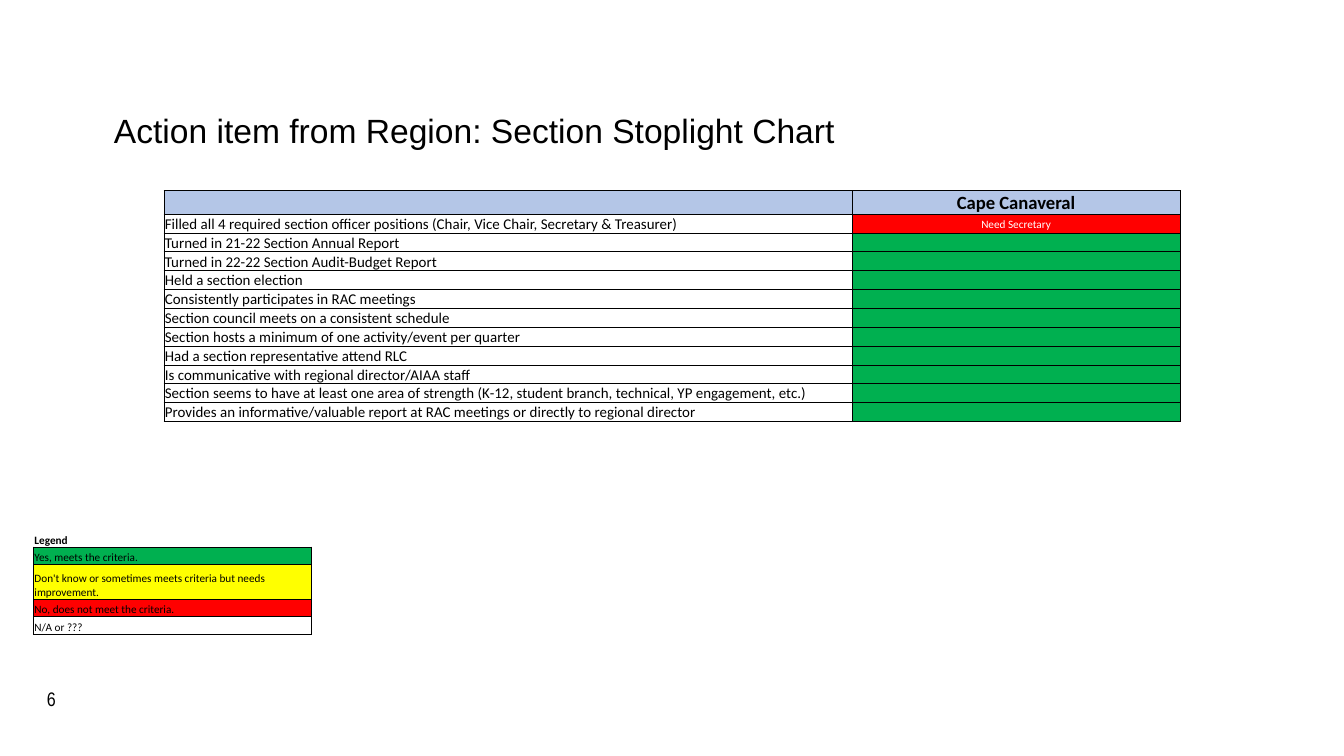
import pptx
import pptx.util
import pptx.dml.color
import pptx.enum.text
import pptx.oxml.ns
import lxml.etree

Inches, Pt = pptx.util.Inches, pptx.util.Pt
RGBColor = pptx.dml.color.RGBColor
ALIGN, ANCHOR = pptx.enum.text.PP_ALIGN, pptx.enum.text.MSO_ANCHOR
qn = pptx.oxml.ns.qn

BLACK = RGBColor(0x00, 0x00, 0x00)
WHITE = RGBColor(0xFF, 0xFF, 0xFF)
BLUE = RGBColor(0xB4, 0xC6, 0xE7)
GREEN = RGBColor(0x00, 0xB0, 0x50)
YELLOW = RGBColor(0xFF, 0xFF, 0x00)
RED = RGBColor(0xFF, 0x00, 0x00)

TITLE = "Action item from Region: Section Stoplight Chart"
PAGE = "6"
SECTION = "Cape Canaveral"
CRITERIA = [
    ("Filled all 4 required section officer positions (Chair, Vice Chair, Secretary & Treasurer)", "Need Secretary", RED),
    ("Turned in 21-22 Section Annual Report", "", GREEN),
    ("Turned in 22-22 Section Audit-Budget Report", "", GREEN),
    ("Held a section election", "", GREEN),
    ("Consistently participates in RAC meetings", "", GREEN),
    ("Section council meets on a consistent schedule", "", GREEN),
    ("Section hosts a minimum of one activity/event per quarter", "", GREEN),
    ("Had a section representative attend RLC", "", GREEN),
    ("Is communicative with regional director/AIAA staff", "", GREEN),
    ("Section seems to have at least one area of strength (K-12, student branch, technical, YP engagement, etc.)", "", GREEN),
    ("Provides an informative/valuable report at RAC meetings or directly to regional director", "", GREEN),
]
LEGEND = [
    ("Yes, meets the criteria.", GREEN, 0.13),
    ("Don't know or sometimes meets criteria but needs improvement.", YELLOW, 0.26),
    ("No, does not meet the criteria.", RED, 0.13),
    ("N/A or ???", None, 0.13),
]


def add_run(p, text, size, font, color=BLACK, bold=False):
    r = p.add_run()
    r.text = text
    r.font.size, r.font.name, r.font.bold = Pt(size), font, bold
    r.font.color.rgb = color


def add_text(s, box, text, size, font, anchor):
    tf = s.shapes.add_textbox(*map(Inches, box)).text_frame
    tf.word_wrap = True
    tf.vertical_anchor = anchor
    add_run(tf.paragraphs[0], text, size, font)


def add_grid(s, left, top, cols, rows):
    frame = s.shapes.add_table(len(rows), len(cols), Inches(left), Inches(top),
                               Inches(sum(cols)), Inches(sum(rows)))
    table = frame.table
    table.first_row = table.horz_banding = False
    for col, width in zip(table.columns, cols):
        col.width = Inches(width)
    for row, height in zip(table.rows, rows):
        row.height = Inches(height)
    return table


def set_cell(cell, text, size, fill=None, color=BLACK, bold=False,
             align=ALIGN.LEFT, anchor=ANCHOR.BOTTOM, sides="LRTB"):
    cell.margin_left = cell.margin_right = cell.margin_top = Pt(0.5)
    cell.margin_bottom = 0
    cell.vertical_anchor = anchor
    p = cell.text_frame.paragraphs[0]
    p.alignment = align
    if text:
        add_run(p, text, size, "Calibri", color, bold)
    else:
        p._p.get_or_add_endParaRPr().set("sz", str(size * 100))
    tcPr = cell._tc.get_or_add_tcPr()
    for side in "LRTB":
        ln = lxml.etree.SubElement(tcPr, qn(f"a:ln{side}"), w=str(Pt(0.5)))
        if side in sides:
            solid = lxml.etree.SubElement(ln, qn("a:solidFill"))
            lxml.etree.SubElement(solid, qn("a:srgbClr"), val=str(BLACK))
        else:
            lxml.etree.SubElement(ln, qn("a:noFill"))
    if fill is None:
        cell.fill.background()
    else:
        cell.fill.solid()
        cell.fill.fore_color.rgb = fill


prs = pptx.Presentation()
prs.slide_width = Inches(10)
prs.slide_height = prs.slide_width * 9 // 16
s = prs.slides.add_slide(prs.slide_layouts[6])

add_text(s, (0.75, 0.69, 8.5, 0.56), TITLE, 18, "Arial", ANCHOR.MIDDLE)
add_text(s, (0.25, 5.06, 1, 0.19), PAGE, 10.5, "Arial Narrow", ANCHOR.TOP)

chart = add_grid(s, 1.22, 1.42, [5.12, 2.44], [0.17] + [0.14] * len(CRITERIA))
set_cell(chart.cell(0, 0), "", 8, BLUE)
set_cell(chart.cell(0, 1), SECTION, 10, BLUE, bold=True, align=ALIGN.CENTER)
for i, (criterion, note, status) in enumerate(CRITERIA, 1):
    set_cell(chart.cell(i, 0), criterion, 8)
    set_cell(chart.cell(i, 1), note, 6, status, WHITE, align=ALIGN.CENTER, anchor=ANCHOR.MIDDLE)

legend = add_grid(s, 0.25, 3.94, [2.07], [0.13] + [height for _, _, height in LEGEND])
set_cell(legend.cell(0, 0), "Legend", 6, bold=True, sides="B")
for i, (meaning, status, _) in enumerate(LEGEND, 1):
    set_cell(legend.cell(i, 0), meaning, 6, status)

prs.save("out.pptx")
